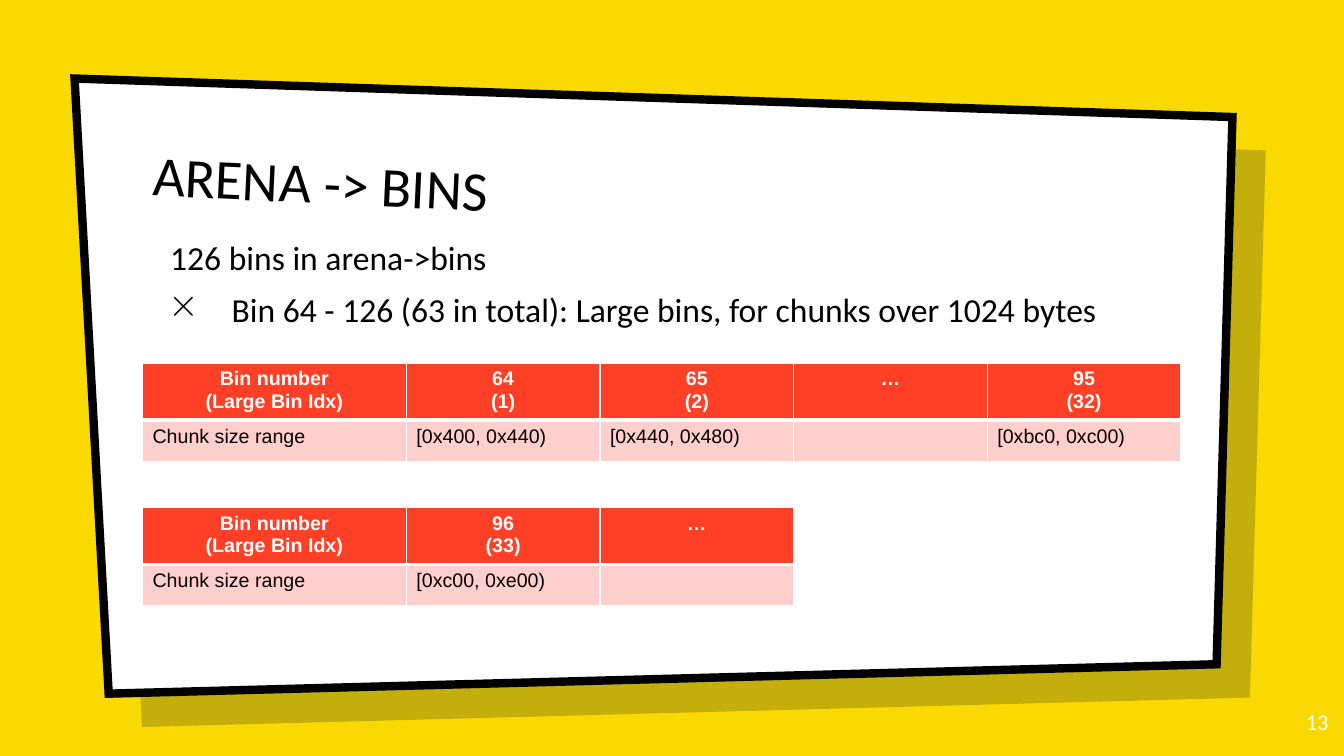
from dataclasses import dataclass

from lxml import etree
from pptx import Presentation
from pptx import util as u
from pptx.dml.color import RGBColor
from pptx.enum import text
from pptx.oxml import ns


@dataclass(frozen=True)
class Theme:
    background: str = "FAD900"
    shade: str = "001936"
    shade_opacity: int = 22
    ink: str = "000000"
    paper: str = "FFFFFF"
    header: str = "FF4026"
    band: str = "FFCFCD"
    heading_font: str = "Calibri"
    table_font: str = "Arial"
    title_size: int = 40
    body_size: int = 24
    number_size: int = 16
    table_size: int = 14


def rgb(color):
    return RGBColor.from_string(color)


def add_xml(parent, tag, **attributes):
    return etree.SubElement(parent, ns.qn(tag), attributes)


def write(para, words, font, size, color, bold=False, align=text.PP_ALIGN.LEFT):
    """Put formatted words in a paragraph."""
    para.alignment = align
    span = para.add_run()
    span.text = words
    span.font.name = font
    span.font.size = u.Pt(size)
    span.font.bold = bold
    span.font.color.rgb = rgb(color)


class SlideBuilder:
    def __init__(self, page, theme):
        self.page = page
        self.theme = theme
        page.background.fill.solid()
        page.background.fill.fore_color.rgb = rgb(theme.background)

    def panel(self, corners, color, shift=0, opacity=None, border=None):
        points = [(u.Cm(x + shift), u.Cm(y + shift)) for x, y in corners]
        builder = self.page.shapes.build_freeform(*points[0])
        builder.add_line_segments(points[1:], close=True)
        shape = builder.convert_to_shape()
        shape.shadow.inherit = False
        shape.fill.solid()
        shape.fill.fore_color.rgb = rgb(color)
        if opacity is not None:
            fill_color = shape.fill._xPr.find(".//" + ns.qn("a:srgbClr"))
            add_xml(fill_color, "a:alpha", val=str(opacity * 1000))
        if border is None:
            shape.line.fill.background()
        else:
            shape.line.color.rgb = rgb(self.theme.ink)
            shape.line.width = u.Pt(border)
            add_xml(shape.line._ln, "a:miter", lim="800000")

    def text_box(self, left, top, width, height, anchor=text.MSO_ANCHOR.TOP, turn=0):
        box = self.page.shapes.add_textbox(*map(u.Cm, (left, top, width, height)))
        box.rotation = turn
        frame = box.text_frame
        frame.word_wrap = True
        frame.vertical_anchor = anchor
        frame.margin_left = frame.margin_right = u.Cm(0.25)
        frame.margin_top = frame.margin_bottom = u.Cm(0.25)
        return frame

    def line(self, left, top, width, height, words, size, color,
             align=text.PP_ALIGN.LEFT, **placing):
        frame = self.text_box(left, top, width, height, **placing)
        write(frame.paragraphs[0], words, self.theme.heading_font, size, color, align=align)

    def body(self, left, top, width, height, intro, bullets):
        theme = self.theme
        frame = self.text_box(left, top, width, height)
        for index, words in enumerate([intro, *bullets]):
            para = frame.add_paragraph() if index else frame.paragraphs[0]
            settings = para._p.get_or_add_pPr()
            settings.set("marL", str(u.Cm(1.7 if index else 0.15)))
            settings.set("indent", str(u.Cm(-1.55 if index else 0)))
            if index:
                para.space_before = u.Pt(8)
                bullet_color = add_xml(settings, "a:buClr")
                add_xml(bullet_color, "a:srgbClr", val=theme.ink)
                add_xml(settings, "a:buChar", char="×")
            write(para, words, theme.heading_font, theme.body_size, theme.ink)

    def cell(self, cell, words, is_header):
        theme = self.theme
        # Borders: a thick rule parts the header from the values
        settings = cell._tc.get_or_add_tcPr()
        thick_side = "B" if is_header else "T"
        for side in "LRTB":
            width = u.Pt(3 if side == thick_side else 1)
            border = add_xml(settings, "a:ln" + side, w=str(width))
            add_xml(add_xml(border, "a:solidFill"), "a:srgbClr", val=theme.paper)
        cell.fill.solid()
        cell.fill.fore_color.rgb = rgb(theme.header if is_header else theme.band)
        if not words:
            return
        frame = cell.text_frame
        for index, part in enumerate(words.split("\n")):
            para = frame.add_paragraph() if index else frame.paragraphs[0]
            write(para, part, theme.table_font, theme.table_size,
                  theme.paper if is_header else theme.ink, bold=is_header,
                  align=text.PP_ALIGN.CENTER if is_header else text.PP_ALIGN.LEFT)

    def bin_table(self, left, top, bins):
        """Draw one column for each (bin number, chunk size range) pair."""
        columns = [("Bin number\n(Large Bin Idx)", "Chunk size range"), *bins]
        widths = [6.65] + [4.88] * len(bins)
        heights = [1.36, 1.04]
        table = self.page.shapes.add_table(
            2, len(columns), u.Cm(left), u.Cm(top),
            u.Cm(sum(widths)), u.Cm(sum(heights))).table
        for row, height in zip(table.rows, heights):
            row.height = u.Cm(height)
        for column_index, (column, width) in enumerate(zip(columns, widths)):
            table.columns[column_index].width = u.Cm(width)
            for row_index, words in enumerate(column):
                self.cell(table.cell(row_index, column_index), words, row_index == 0)


def main():
    theme = Theme()
    deck = Presentation()
    deck.slide_width, deck.slide_height = u.Cm(33.87), u.Cm(19.05)
    slide = SlideBuilder(deck.slides.add_slide(deck.slide_layouts[6]), theme)

    # Slanted panel and its shade
    corners = [(1.88, 1.98), (31.06, 2.95), (30.66, 16.74), (2.74, 17.48)]
    slide.panel(corners, theme.shade, shift=0.84, opacity=theme.shade_opacity)
    slide.panel(corners, theme.paper, border=6)

    # Title, text and slide number
    slide.line(3.61, 3.25, 26.04, 2.82, "ARENA -> BINS", theme.title_size, theme.ink,
               anchor=text.MSO_ANCHOR.BOTTOM, turn=2.7)
    slide.body(3.89, 5.72, 25.81, 10.69, "126 bins in arena->bins",
               ["Bin 64 - 126 (63 in total): Large bins, for chunks over 1024 bytes"])
    slide.line(31.7, 17.6, 2.03, 1.45, "13", theme.number_size, theme.paper,
               align=text.PP_ALIGN.RIGHT)

    # Large bin tables
    slide.bin_table(3.59, 9.15, [
        ("64\n(1)", "[0x400, 0x440)"),
        ("65\n(2)", "[0x440, 0x480)"),
        ("…", ""),
        ("95\n(32)", "[0xbc0, 0xc00)"),
    ])
    slide.bin_table(3.59, 12.78, [("96\n(33)", "[0xc00, 0xe00)"), ("…", "")])

    deck.save("out.pptx")


if __name__ == "__main__":
    main()
